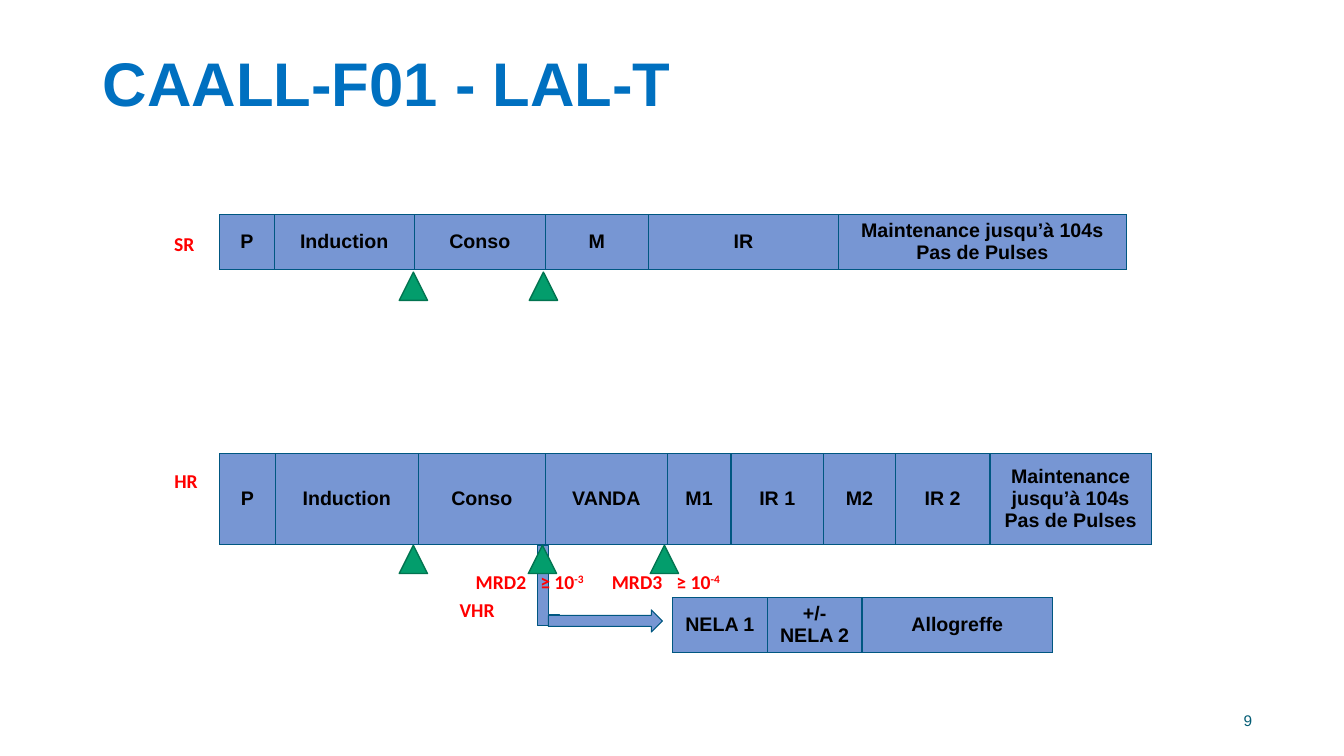
"""Build the CAALL-F01 LAL-T treatment plan slide."""
from lxml import etree
from pptx import Presentation
from pptx.dml.color import RGBColor
from pptx.enum.shapes import MSO_SHAPE as SHAPE
from pptx.enum.text import MSO_ANCHOR as ANCHOR, PP_ALIGN as ALIGN
from pptx.oxml import parse_xml
from pptx.oxml.ns import nsdecls, qn
from pptx.util import Inches, Pt

TITLE = "CAALL-F01 - LAL-T"
MAINTENANCE = "Maintenance jusqu’à 104s\nPas de Pulses"
ARMS = [
    (6.67, 5.93, 0.54, [("NELA 1", 0.94), ("+/-\nNELA 2", 0.94), ("Allogreffe", 1.89)]),
    (2.18, 2.13, 0.54, [("P", 0.54), ("Induction", 1.39), ("Conso", 1.3),
                        ("M", 1.02), ("IR", 1.89), (MAINTENANCE, 2.85)]),
    (2.18, 4.5, 0.9, [("P", 0.55), ("Induction", 1.42), ("Conso", 1.26),
                      ("VANDA", 1.21), ("M1", 0.63), ("IR 1", 0.92),
                      ("M2", 0.71), ("IR 2", 0.94), (MAINTENANCE, 1.6)]),
]
RISK_LABELS = [("SR", 1.63, 2.25, 0.47), ("HR", 1.63, 4.6, 0.55), ("VHR", 4.46, 5.88, 0.71)]
MRD_LABELS = [("MRD2\t≥ 10", "-3", 4.62, 1.35), ("MRD3\t≥ 10", "-4", 5.97, 1.46)]
MRD_POINTS = [(2.7, [3.96, 5.25]), (5.41, [3.96, 5.24, 6.45])]
VHR_ARROW = [(SHAPE.CORNER, 5.33, 5.41, 0.22, 0.8), (SHAPE.RIGHT_ARROW, 5.44, 6.05, 1.13, 0.22)]
MRD_TAB = 0.64

BLACK = RGBColor(0x00, 0x00, 0x00)
RED = RGBColor(0xFF, 0x00, 0x00)
TITLE_BLUE = RGBColor(0x00, 0x70, 0xC0)
NUMBER_BLUE = RGBColor(0x04, 0x5D, 0x75)
PHASE_FILL = RGBColor(0x77, 0x96, 0xD3)
PHASE_LINE = RGBColor(0x00, 0x57, 0x81)
MRD_FILL = RGBColor(0x03, 0x9D, 0x6C)
MRD_LINE = RGBColor(0x02, 0x74, 0x50)


def write(tf, text, size=14, font="Arial", color=BLACK, bold=True, align=ALIGN.LEFT, power=None):
    for i, line in enumerate(text.split("\n")):
        p = tf.paragraphs[0] if i == 0 else tf.add_paragraph()
        p.alignment = align
        for part in filter(None, (line, power)):
            r = p.add_run()
            r.text = part
            r.font.size, r.font.name, r.font.bold = Pt(size), font, bold
            r.font.color.rgb = color
            if part == power:
                r.font._element.set("baseline", "30000")
    return tf.paragraphs[0]


def add_label(s, text, x, y, w, h=0.34, **fmt):
    tf = s.shapes.add_textbox(Inches(x), Inches(y), Inches(w), Inches(h)).text_frame
    tf.word_wrap = True
    return tf, write(tf, text, **fmt)


def add_figure(shapes, kind, x, y, w, h, fill, line, width):
    sp = shapes.add_shape(kind, Inches(x), Inches(y), Inches(w), Inches(h))
    sp.shadow.inherit = False
    sp.fill.solid()
    sp.fill.fore_color.rgb = fill
    sp.line.color.rgb = line
    sp.line.width = Pt(width)


def add_borders(cell):
    tc_pr = cell._tc.get_or_add_tcPr()
    for i, side in enumerate(("lnL", "lnR", "lnT", "lnB")):
        tc_pr.insert(i, parse_xml(
            f'<a:{side} {nsdecls("a")} w="{Pt(1)}"><a:solidFill>'
            f'<a:srgbClr val="{PHASE_LINE}"/></a:solidFill></a:{side}>'))


def add_arm(s, x, y, h, phases):
    total = sum(w for _, w in phases)
    table = s.shapes.add_table(1, len(phases), Inches(x), Inches(y), Inches(total), Inches(h)).table
    table.first_row = table.horz_banding = False
    for i, (text, w) in enumerate(phases):
        table.columns[i].width = Inches(w)
        cell = table.cell(0, i)
        cell.vertical_anchor = ANCHOR.MIDDLE
        cell.fill.solid()
        cell.fill.fore_color.rgb = PHASE_FILL
        add_borders(cell)
        write(cell.text_frame, text, align=ALIGN.CENTER)


def main():
    prs = Presentation()
    prs.slide_width, prs.slide_height = Inches(13.33), Inches(7.5)
    s = prs.slides.add_slide(prs.slide_layouts[5])

    title = s.shapes.title
    title.left, title.top, title.width, title.height = map(Inches, (0.92, 0.4, 11.5, 0.92))
    title.text_frame.vertical_anchor = ANCHOR.MIDDLE
    write(title.text_frame, TITLE, size=44, color=TITLE_BLUE).line_spacing = 0.9

    for arm in ARMS:
        add_arm(s, *arm)
    for label in RISK_LABELS:
        add_label(s, *label, font="Calibri", color=RED)

    group = s.shapes.add_group_shape()
    for part in VHR_ARROW:
        add_figure(group.shapes, *part, PHASE_FILL, PHASE_LINE, 0.75)

    for text, power, x, w in MRD_LABELS:
        _, p = add_label(s, text, x, 5.6, w, font="Calibri", color=RED, power=power)
        tabs = etree.SubElement(p._p.get_or_add_pPr(), qn("a:tabLst"))
        etree.SubElement(tabs, qn("a:tab"), pos=str(Inches(MRD_TAB)), algn="l")

    for y, lefts in MRD_POINTS:
        for x in lefts:
            add_figure(s.shapes, SHAPE.ISOSCELES_TRIANGLE, x, y, 0.28, 0.28, MRD_FILL, MRD_LINE, 1)

    tf, _ = add_label(s, "9", 9.42, 6.95, 3, 0.4, size=11, color=NUMBER_BLUE,
                      bold=False, align=ALIGN.RIGHT)
    tf.vertical_anchor = ANCHOR.MIDDLE
    tf.margin_right = 0
    prs.save("out.pptx")


if __name__ == "__main__":
    main()
